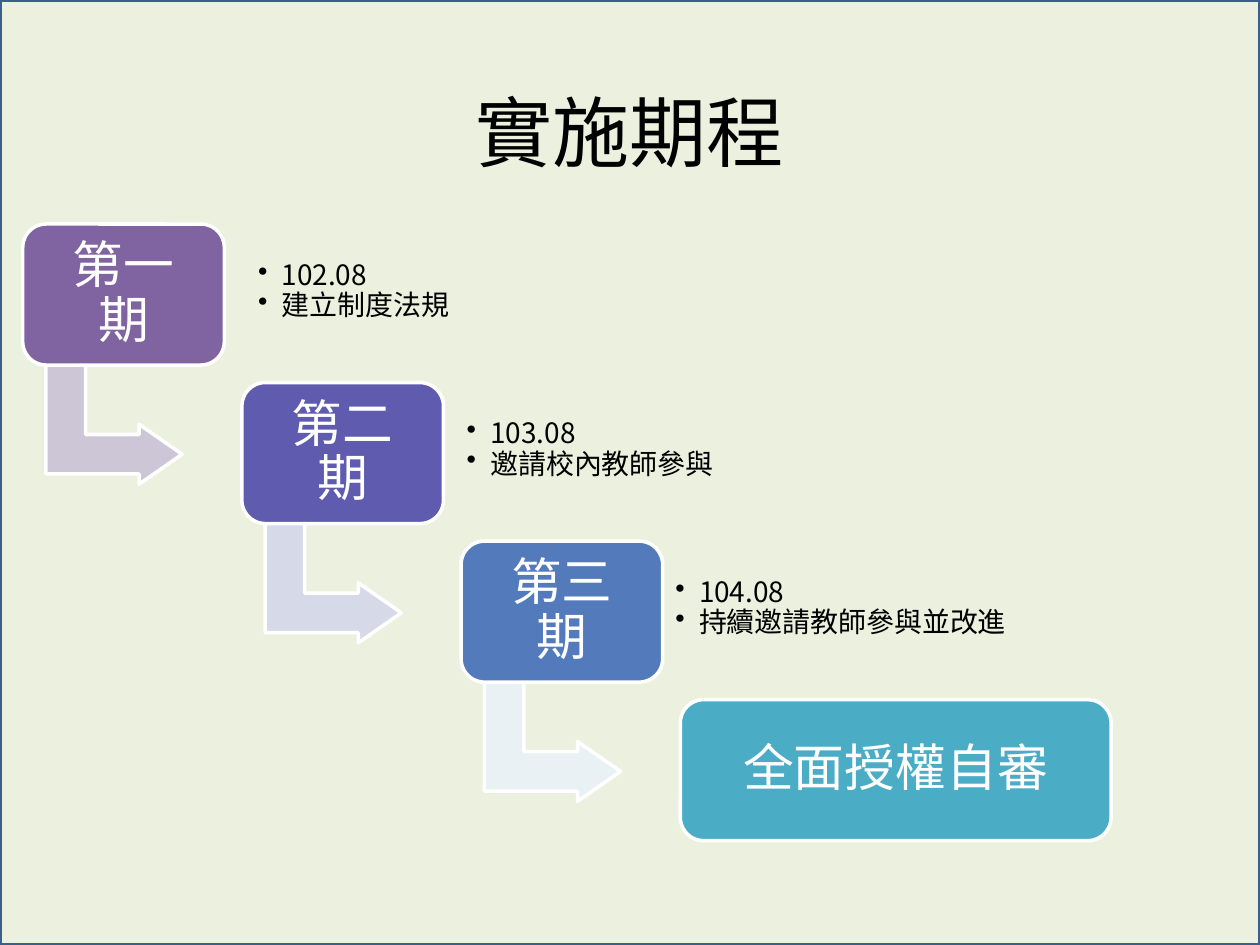
import pptx
import pptx.dml.color
import pptx.enum.shapes
import pptx.enum.text
import pptx.oxml.ns
import pptx.util
from lxml import etree

Pt = pptx.util.Pt
SHAPE = pptx.enum.shapes.MSO_SHAPE
ALIGN = pptx.enum.text.PP_ALIGN
MIDDLE = pptx.enum.text.MSO_ANCHOR.MIDDLE

# Content
TITLE = "實施期程"
PHASES = [
    {"label": "第一期", "notes": ["102.08", "建立制度法規"],
     "fill": "phase1", "arrow": "arrow1", "notes_width": 207},
    {"label": "第二期", "notes": ["103.08", "邀請校內教師參與"],
     "fill": "phase2", "arrow": "arrow2", "notes_width": 194},
    {"label": "第三期", "notes": ["104.08", "持續邀請教師參與並改進"],
     "fill": "phase3", "arrow": "arrow3", "notes_width": 227},
]
GOAL = "全面授權自審"

# Style
FONT = "Noto Sans CJK SC"
COLORS = {
    "background": "EBF1DE", "frame": "3A5F8C", "black": "000000", "white": "FFFFFF",
    "phase1": "8064A2", "phase2": "5F5BAE", "phase3": "537ABA", "goal": "4BACC6",
    "arrow1": "CDC6D7", "arrow2": "D6D9E8", "arrow3": "E9F1F5",
}

# Staircase layout, in points
PAGE_W, PAGE_H = 720, 540
LEFT, TOP = 13, 128
STEP_X, STEP_Y = 125.25, 90.6
BOX_W, BOX_H, GOAL_W = 115.2, 80.6, 246.2
ARROW_DX, ARROW_DY, ARROW_W, ARROW_H = 18, 75.6, 68.4, 77.8
NOTES_LEFT, NOTES_STEP, NOTES_DY, NOTES_H = 142.5, 119.25, 6, 65
BULLET_INDENT = 13.5


def color(name):
    return pptx.dml.color.RGBColor.from_string(COLORS[name])


def add_block(page, kind, place, fill, line="white"):
    block = page.shapes.add_shape(kind, *map(Pt, place))
    block.shadow.inherit = False
    block.fill.solid()
    block.fill.fore_color.rgb = color(fill)
    block.line.color.rgb = color(line)
    block.line.width = Pt(2)
    return block


def add_bullet(para):
    props = para._p.get_or_add_pPr()
    props.set("marL", str(Pt(BULLET_INDENT)))
    props.set("indent", str(-Pt(BULLET_INDENT)))
    bullet = etree.SubElement(props, pptx.oxml.ns.qn("a:buChar"))
    bullet.set("char", "•")


def write(box, lines, size, ink, inset, align=ALIGN.CENTER, spacing=0.9, bullets=False):
    frame = box.text_frame
    frame.word_wrap = True
    frame.vertical_anchor = MIDDLE
    frame.margin_left = frame.margin_right = Pt(inset)
    frame.margin_top = frame.margin_bottom = Pt(inset)
    for index, line in enumerate(lines):
        para = frame.add_paragraph() if index else frame.paragraphs[0]
        if bullets:
            add_bullet(para)
        para.alignment = align
        para.line_spacing = spacing
        span = para.add_run()
        span.text = line
        span.font.size = Pt(size)
        span.font.name = FONT
        span.font.color.rgb = color(ink)
        east_asian = etree.SubElement(span.font._element, pptx.oxml.ns.qn("a:ea"))
        east_asian.set("typeface", FONT)


def add_step(page, index, width, label, fill):
    place = (LEFT + index * STEP_X, TOP + index * STEP_Y, width, BOX_H)
    box = add_block(page, SHAPE.ROUNDED_RECTANGLE, place, fill)
    write(box, [label], 29, "white", 12)


def main():
    deck = pptx.Presentation()
    deck.slide_width, deck.slide_height = Pt(PAGE_W), Pt(PAGE_H)
    page = deck.slides.add_slide(deck.slide_layouts[6])

    # Framed background and title
    add_block(page, SHAPE.RECTANGLE, (0, 0, PAGE_W, PAGE_H), "background", "frame")
    title = page.shapes.add_textbox(Pt(36), Pt(38), Pt(648), Pt(73))
    write(title, [TITLE], 44, "black", 3.6, spacing=1)

    # Phases: arrow behind its box, notes to the right
    for index, phase in enumerate(PHASES):
        x, y = LEFT + index * STEP_X, TOP + index * STEP_Y
        arrow = add_block(page, SHAPE.BENT_UP_ARROW,
                          (x + ARROW_DX, y + ARROW_DY, ARROW_W, ARROW_H), phase["arrow"])
        arrow.rotation = 90
        for slot, value in enumerate((0.33, 0.25, 0.36)):
            arrow.adjustments[slot] = value
        add_step(page, index, BOX_W, phase["label"], phase["fill"])
        notes = page.shapes.add_textbox(
            Pt(NOTES_LEFT + index * NOTES_STEP), Pt(y + NOTES_DY),
            Pt(phase["notes_width"]), Pt(NOTES_H))
        write(notes, phase["notes"], 16, "black", 5, align=ALIGN.LEFT, bullets=True)

    # Final goal
    add_step(page, len(PHASES), GOAL_W, GOAL, "goal")

    deck.save("out.pptx")


if __name__ == "__main__":
    main()
